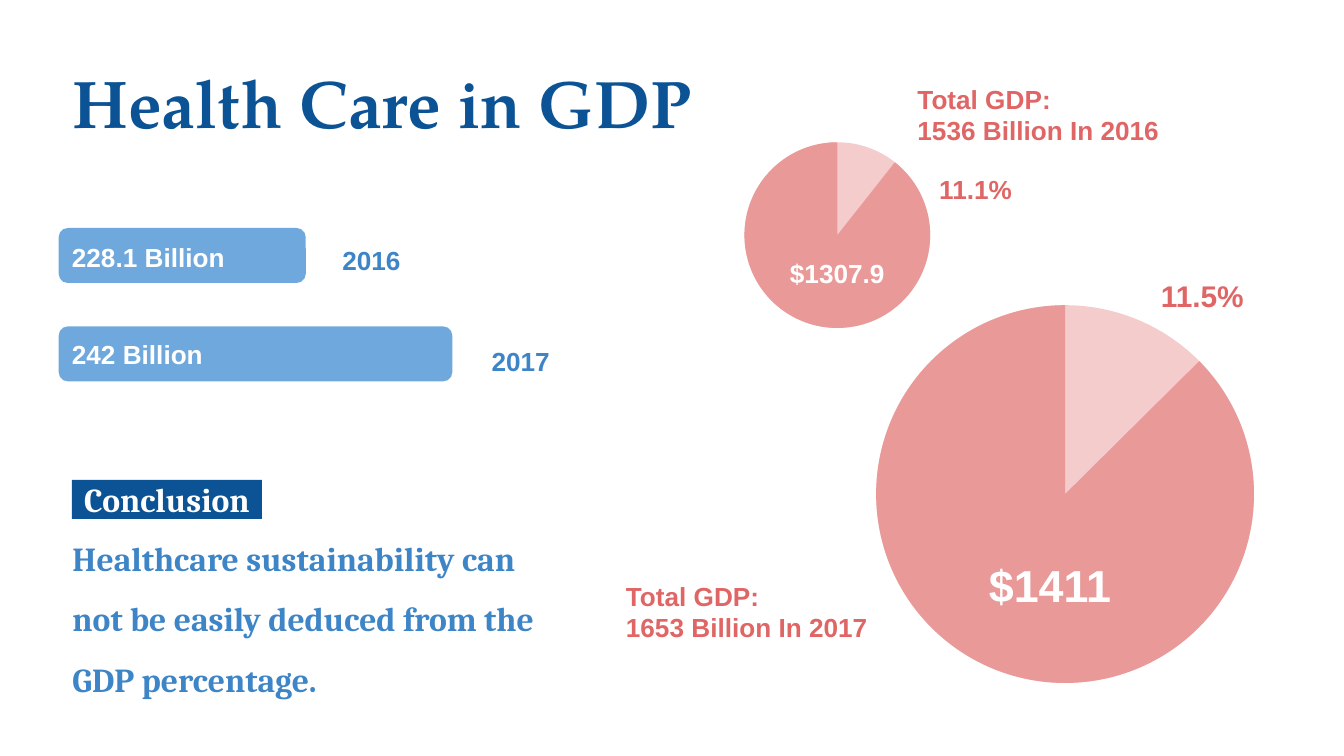
from dataclasses import dataclass

from pptx import Presentation, util as u
from pptx.dml.color import RGBColor
from pptx.enum import shapes, text


@dataclass(frozen=True)
class Theme:
    navy: str = "0B5394"
    blue: str = "3D85C6"
    sky: str = "6FA8DC"
    red: str = "E06666"
    rose: str = "EA9999"
    blush: str = "F4CCCC"
    white: str = "FFFFFF"
    title_font: str = "TeX Gyre Pagella"
    body_font: str = "Cambria"
    label_font: str = "Arial"
    title_size: int = 36
    body_size: int = 18
    label_size: int = 14
    percent_size: int = 16
    amount_size: int = 24


theme = Theme()

# Content; all places are in centimetres
TITLE = "Health Care in GDP"
HEADING = "Conclusion"
CONCLUSION = ("Healthcare sustainability can not be easily deduced "
              "from the GDP percentage.")

# top, bar width, value, value top, year, year left, year top
BARS = [
    (4.31, 4.67, "228.1 Billion", 4.32, "2016", 6.22, 4.37),
    (6.17, 7.44, "242 Billion", 6.15, "2017", 9.04, 6.27),
]
BAR_LEFT, BAR_HEIGHT = 1.11, 1.04

# left, top, diameter, angle where the dark part starts (degrees)
PIES = [
    (14.07, 2.69, 3.51, 308.33),
    (16.56, 5.77, 7.14, 315.26),
]
PIE_END = 270

# lines, left, top, width, height, size, colour
PIE_LABELS = [
    (["Total GDP:", "1536 Billion In 2016"], 17.09, 1.32, 5.66, 1.85,
     theme.label_size, theme.red),
    (["11.1%"], 17.5, 3.02, 2.4, 1.04, theme.label_size, theme.red),
    (["$1307.9"], 14.68, 4.62, 2.67, 0.79, theme.label_size, theme.white),
    (["Total GDP:", "1653 Billion In 2017"], 11.58, 10.72, 6.25, 1.85,
     theme.label_size, theme.red),
    (["11.5%"], 21.69, 5, 3.6, 1.17, theme.percent_size, theme.red),
    (["$1411"], 18.44, 10.29, 4.29, 1.04, theme.amount_size, theme.white),
]

presentation = Presentation()
presentation.slide_width = u.Cm(25.4)
presentation.slide_height = u.Cm(14.29)
slide = presentation.slides.add_slide(presentation.slide_layouts[6])


def style(paragraph, size, colour, font):
    paragraph.font.size = u.Pt(size)
    paragraph.font.bold = True
    paragraph.font.name = font
    paragraph.font.color.rgb = RGBColor.from_string(colour)


def add_text(lines, left, top, width, height, size, colour,
             font=theme.label_font, spacing=None):
    box = slide.shapes.add_textbox(*map(u.Cm, (left, top, width, height)))
    frame = box.text_frame
    frame.word_wrap = True
    frame.margin_left = frame.margin_right = u.Cm(0.25)
    frame.margin_top = frame.margin_bottom = u.Cm(0.25)
    frame.text = "\n".join(lines)
    for paragraph in frame.paragraphs:
        style(paragraph, size, colour, font)
        if spacing:
            paragraph.line_spacing = spacing


def add_shape(kind, left, top, width, height, colour):
    shape = slide.shapes.add_shape(kind, *map(u.Cm, (left, top, width, height)))
    shape.shadow.inherit = False
    shape.fill.solid()
    shape.fill.fore_color.rgb = RGBColor.from_string(colour)
    shape.line.fill.background()
    return shape


# Title
add_text([TITLE], 1.12, 0.91, 12.95, 1.85, theme.title_size, theme.navy,
         theme.title_font)

# Spending bars with value and year
for top, width, value, value_top, year, year_left, year_top in BARS:
    add_shape(shapes.MSO_SHAPE.ROUNDED_RECTANGLE, BAR_LEFT, top, width,
              BAR_HEIGHT, theme.sky)
    add_text([value], BAR_LEFT, value_top, 4, BAR_HEIGHT, theme.label_size,
             theme.white)
    add_text([year], year_left, year_top, 2.26, BAR_HEIGHT, theme.label_size,
             theme.blue)

# GDP circles: a light disc under a dark pie
for left, top, diameter, start in PIES:
    add_shape(shapes.MSO_SHAPE.OVAL, left, top, diameter, diameter, theme.blush)
    pie = add_shape(shapes.MSO_SHAPE.PIE, left, top, diameter, diameter,
                    theme.rose)
    for index, angle in enumerate((start, PIE_END)):
        pie.adjustments[index] = angle * 0.6  # 60000 units a degree, per 100000

for label in PIE_LABELS:
    add_text(*label)

# Conclusion
heading = add_shape(shapes.MSO_SHAPE.RECTANGLE, 1.36, 9.07, 3.59, 0.74,
                    theme.navy)
frame = heading.text_frame
frame.margin_left = frame.margin_right = 0
frame.margin_top = frame.margin_bottom = 0
frame.vertical_anchor = text.MSO_ANCHOR.MIDDLE
frame.text = HEADING
frame.paragraphs[0].alignment = text.PP_ALIGN.CENTER
style(frame.paragraphs[0], theme.body_size, theme.white, theme.body_font)
add_text([CONCLUSION], 1.12, 9.53, 9.47, 3.7, theme.body_size, theme.blue,
         theme.body_font, spacing=1.5)

presentation.save("out.pptx")
